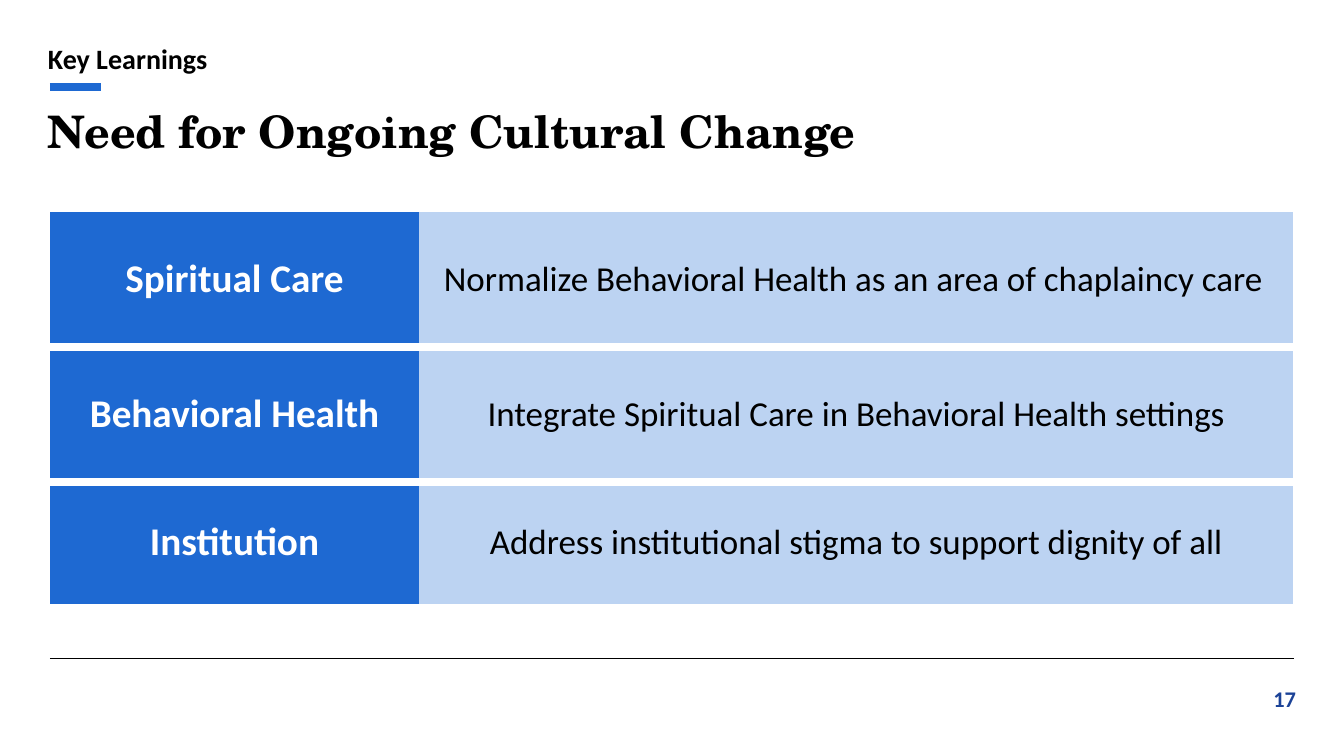
"""Build the slide on the need for ongoing cultural change."""
from lxml import etree
from pptx import Presentation, util as u
from pptx.dml.color import RGBColor
from pptx.enum import shapes, text
from pptx.oxml import parse_xml
from pptx.oxml.ns import nsdecls, qn

PX = 914400 / 100.8
BLACK = RGBColor(0, 0, 0)
WHITE = RGBColor(255, 255, 255)
BLUE = RGBColor(0x1E, 0x69, 0xD2)
PALE = RGBColor(0xBC, 0xD3, 0xF2)
NAVY = RGBColor(0x1B, 0x42, 0x97)
NO_GRID = "{2D5ABB26-0587-4C30-8999-92F81FD0307C}"


def px(*lengths):
    return [round(length * PX) for length in lengths]


def write(frame, words, size, color, bold=True, font="Calibri", align=text.PP_ALIGN.LEFT, spacing=1.0):
    frame.word_wrap = True
    para = frame.paragraphs[0]
    para.text = words
    para.alignment = align
    para.line_spacing = spacing
    para.font.name = font
    para.font.size = u.Pt(size)
    para.font.bold = bold
    para.font.color.rgb = color


deck = Presentation()
deck.slide_width, deck.slide_height = px(1344, 756)
page = deck.slides.add_slide(deck.slide_layouts[6])

for right, y, color, width in [(1294, 659, BLACK, 0.75), (101, 87, BLUE, 6)]:
    rule = page.shapes.add_connector(shapes.MSO_CONNECTOR.STRAIGHT, *px(50, y, right, y))
    rule.line.color.rgb = color
    rule.line.width = u.Pt(width)
    etree.SubElement(rule._element.spPr, qn("a:effectLst"))

number = page.shapes.add_textbox(*px(1233, 680, 73, 37))
write(number.text_frame, "17", 16, NAVY, align=text.PP_ALIGN.RIGHT)

title = page.shapes.add_textbox(*px(38, 99, 1256, 66))
write(title.text_frame, "Need for Ongoing Cultural Change", 32, BLACK, font="TeX Gyre Schola")

topic = page.shapes.add_textbox(*px(38, 40, 1256, 57))
write(topic.text_frame, "Key Learnings", 20, BLACK, spacing=0.9)

learnings = [
    ("Spiritual Care", "Normalize Behavioral Health as an area of chaplaincy care", 135),
    ("Behavioral Health", "Integrate Spiritual Care in Behavioral Health settings", 135),
    ("Institution", "Address institutional stigma to support dignity of all", 122),
]
table = page.shapes.add_table(len(learnings), 2, *px(50, 212, 1243, 392)).table
table.first_row = table.horz_banding = False
table._tbl.tblPr.find(qn("a:tableStyleId")).text = NO_GRID
table.columns[0].width, table.columns[1].width = px(369, 874)

last = len(learnings) - 1
for i, (area, change, height) in enumerate(learnings):
    table.rows[i].height = px(height)[0]
    for cell, fill in zip(table.rows[i].cells, (BLUE, PALE)):
        cell.margin_left, cell.margin_top, cell.margin_right, cell.margin_bottom = px(25, 15, 25, 15)
        cell.vertical_anchor = text.MSO_ANCHOR.MIDDLE
        for edge, inner in (("lnT", i > 0), ("lnB", i < last)):
            if inner:
                cell._tc.get_or_add_tcPr().append(parse_xml(
                    f'<a:{edge} {nsdecls("a")} w="{u.Pt(6)}"><a:solidFill>'
                    f'<a:srgbClr val="{WHITE}"/></a:solidFill></a:{edge}>'))
        cell.fill.solid()
        cell.fill.fore_color.rgb = fill
    write(table.cell(i, 0).text_frame, area, 28, WHITE, align=text.PP_ALIGN.CENTER, spacing=0.9)
    write(table.cell(i, 1).text_frame, change, 25, BLACK, bold=False,
          align=text.PP_ALIGN.CENTER if i else text.PP_ALIGN.LEFT)

deck.save("out.pptx")
